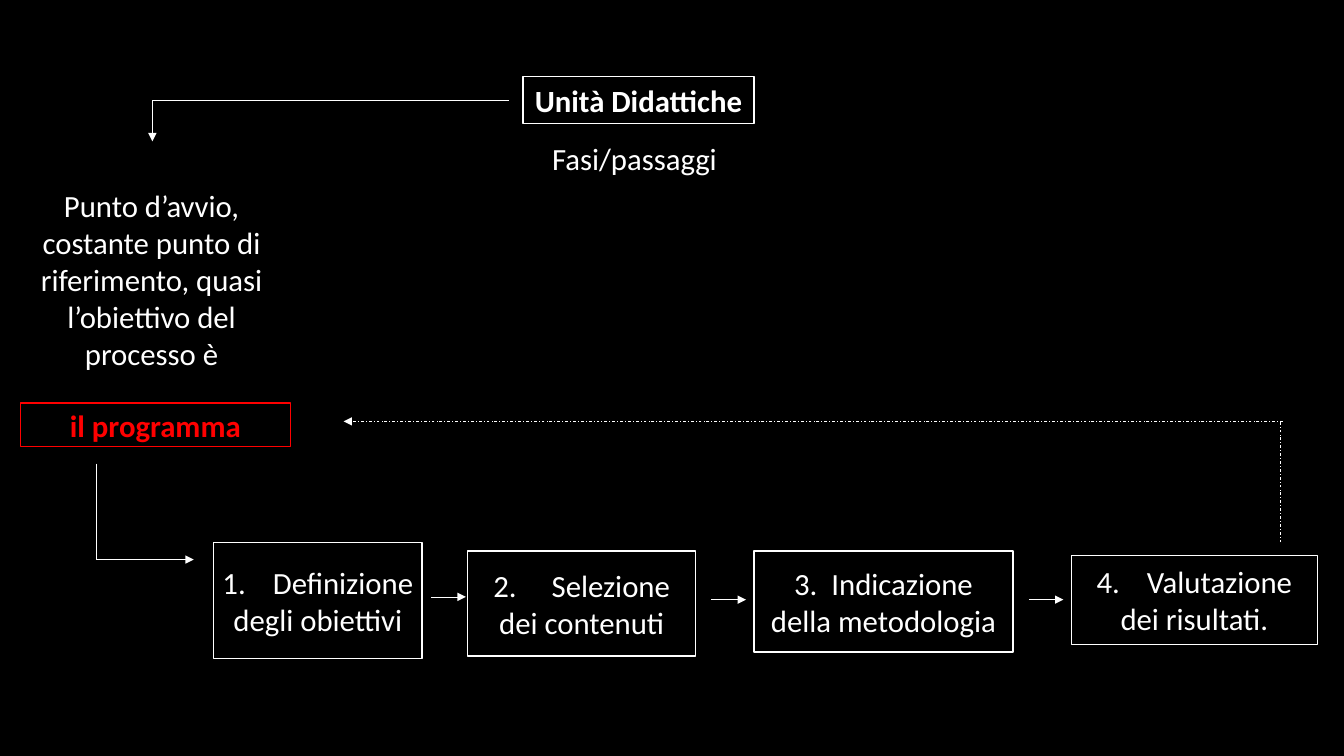
from lxml import etree
from pptx import Presentation
from pptx.dml.color import RGBColor
from pptx.enum import dml, shapes, text
from pptx.oxml import ns
from pptx.util import Cm, Pt

INK = {"black": "000000", "white": "FFFFFF", "red": "FF0000"}

deck = Presentation()
deck.slide_width, deck.slide_height = Cm(33.87), Cm(19.05)
slide = deck.slides.add_slide(deck.slide_layouts[6])
back = slide.background.fill
back.solid()
back.fore_color.rgb = RGBColor.from_string(INK["black"])


def add_box(spot, lines, ink="white", bold=False, frame=True):
    """Add centred lines of text at spot, inside a drawn frame if asked."""
    box = slide.shapes.add_shape(shapes.MSO_SHAPE.RECTANGLE, *map(Cm, spot)) \
        if frame else slide.shapes.add_textbox(*map(Cm, spot))
    if frame:
        box.shadow.inherit = False
        box.fill.background()
        box.line.color.rgb = RGBColor.from_string(INK[ink])
        box.line.width = Pt(1)
    body = box.text_frame
    body.word_wrap = True
    body.vertical_anchor = text.MSO_ANCHOR.MIDDLE
    body.margin_left = body.margin_right = 0
    body.margin_top = body.margin_bottom = 0
    for i, line in enumerate(lines):
        para = body.add_paragraph() if i else body.paragraphs[0]
        para.alignment = text.PP_ALIGN.CENTER
        run = para.add_run()
        run.text = line
        run.font.name, run.font.size, run.font.bold = "Calibri", Pt(22), bold
        run.font.color.rgb = RGBColor.from_string(INK[ink])
    return box


def add_line(start, end, head=True, dash=False):
    line = slide.shapes.add_connector(
        shapes.MSO_CONNECTOR.STRAIGHT, *map(Cm, start + end))
    line.line.color.rgb = RGBColor.from_string(INK["white"])
    line.line.width = Pt(0.5)
    if dash:
        line.line.dash_style = dml.MSO_LINE.DASH_DOT
    if head:
        tail = etree.SubElement(line.line._get_or_add_ln(), ns.qn("a:tailEnd"))
        tail.set("type", "triangle")
    etree.SubElement(line._element.spPr, ns.qn("a:effectLst"))


# Title, starting point and programme
add_box((13.18, 1.93, 5.82, 1.19), ["Unità Didattiche"], bold=True)
add_box((13.64, 3.38, 4.7, 1.19), ["Fasi/passaggi"], frame=False)
add_box((0.68, 4.68, 6.28, 4.7),
        ["Punto d’avvio, costante punto di riferimento, quasi "
         "l’obiettivo del processo è"], frame=False)
add_box((0.51, 10.16, 6.81, 1.09), ["il programma"], "red", True)

# Numbered steps: place, hanging indent, two lines
steps = [
    ((5.38, 13.67, 5.26, 2.92), 1.27, ["Definizione", "degli obiettivi"]),
    ((11.79, 13.89, 5.74, 2.64), 1.47, ["Selezione", "dei contenuti"]),
    ((19, 13.89, 6.53, 2.54), 0.94, ["Indicazione", "della metodologia"]),
    ((27, 14, 6.2, 2.24), 1.27, ["Valutazione", "dei risultati."]),
]
for count, (spot, hang, lines) in enumerate(steps, 1):
    first = add_box(spot, lines).text_frame.paragraphs[0]
    props = first._p.get_or_add_pPr()
    props.set("marL", str(Cm(hang)))
    props.set("indent", str(-Cm(hang)))
    mark = etree.SubElement(props, ns.qn("a:buAutoNum"))
    mark.set("type", "arabicPeriod")
    mark.set("startAt", str(count))

# Arrows between the steps
for left, top in [(10.87, 15.04), (17.93, 15.11), (25.93, 15.11)]:
    add_line((left, top), (left + 0.87, top))

# Bent arrows: title to start, programme to steps, results to programme
add_line((12.83, 2.54), (3.84, 2.54), head=False)
add_line((3.84, 2.54), (3.84, 3.56))
add_line((2.44, 11.68), (2.44, 14.1), head=False)
add_line((2.44, 14.1), (4.88, 14.1))
add_line((32.26, 13.67), (32.26, 10.62), head=False, dash=True)
add_line((32.33, 10.62), (8.66, 10.62), dash=True)

deck.save("out.pptx")
